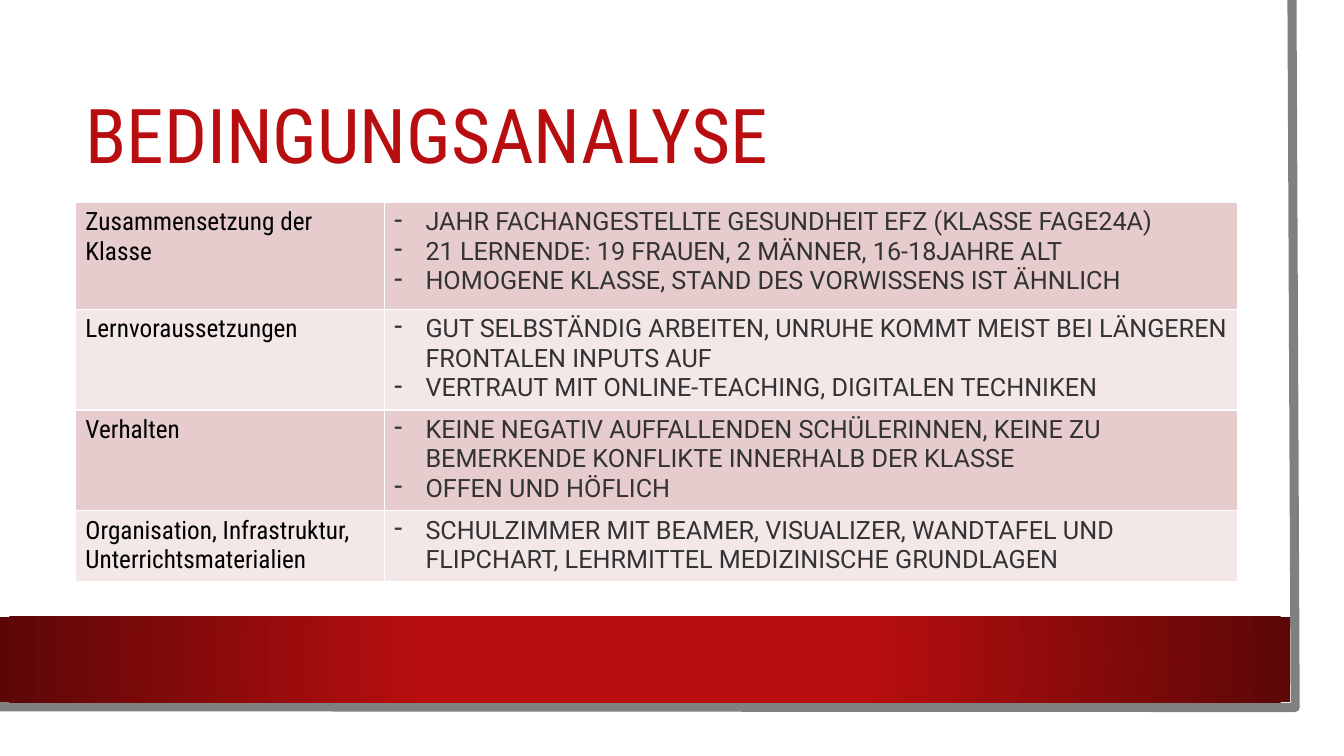
from dataclasses import dataclass

from lxml import etree
from pptx import Presentation
from pptx import util as u
from pptx.dml.color import RGBColor
from pptx.enum import shapes, text
from pptx.oxml import parse_xml
from pptx.oxml.ns import nsdecls, qn


@dataclass(frozen=True)
class Theme:
    red: str = "B80E0F"
    dark_red: str = "5C0707"
    grey: str = "808080"
    white: str = "FFFFFF"
    black: str = "000000"
    ink: str = "333333"
    row_fills: tuple = ("E6CCCC", "F3E7E7")
    heading_font: str = "Roboto Condensed"
    body_font: str = "Roboto"
    title_size: int = 54
    body_size: int = 18
    frame_width: float = 6.5
    border_width: int = 1


THEME = Theme()
CONDITIONS = [
    ("Zusammensetzung der Klasse", [
        "JAHR FACHANGESTELLTE GESUNDHEIT EFZ (KLASSE FAGE24A)",
        "21 LERNENDE: 19 FRAUEN, 2 MÄNNER, 16-18JAHRE ALT",
        "HOMOGENE KLASSE, STAND DES VORWISSENS IST ÄHNLICH",
    ]),
    ("Lernvoraussetzungen", [
        "GUT SELBSTÄNDIG ARBEITEN, UNRUHE KOMMT MEIST BEI LÄNGEREN FRONTALEN INPUTS AUF",
        "VERTRAUT MIT ONLINE-TEACHING, DIGITALEN TECHNIKEN",
    ]),
    ("Verhalten", [
        "KEINE NEGATIV AUFFALLENDEN SCHÜLERINNEN, KEINE ZU BEMERKENDE KONFLIKTE "
        "INNERHALB DER KLASSE",
        "OFFEN UND HÖFLICH",
    ]),
    ("Organisation, Infrastruktur, Unterrichtsmaterialien", [
        "SCHULZIMMER MIT BEAMER, VISUALIZER, WANDTAFEL UND FLIPCHART, "
        "LEHRMITTEL MEDIZINISCHE GRUNDLAGEN",
    ]),
]
COLUMN_WIDTHS = (7.78, 21.51)
ROW_HEIGHTS = (2.69, 2.49, 2.49, 1.74)
BULLET_INDENT = 0.79


def apply_format(target, values):
    for name, value in values.items():
        setattr(target, name, value)


def add_span(para, wording, font, size, color):
    span = para.add_run()
    span.text = wording
    apply_format(span.font, {"name": font, "size": u.Pt(size), "bold": False})
    span.font.color.rgb = RGBColor.from_string(color)


def add_panel(page, box):
    panel = page.shapes.add_shape(shapes.MSO_SHAPE.RECTANGLE, *map(u.Cm, box))
    panel.shadow.inherit = False
    panel.fill.solid()
    panel.fill.fore_color.rgb = RGBColor.from_string(THEME.white)
    panel.line.fill.background()
    return panel


def add_backdrop(page, box):
    left, top, width, height = box
    # White sheet
    add_panel(page, box)

    # Grey edge along the right and bottom
    right, bottom = left + width - 0.63, top + height - 0.64
    builder = page.shapes.build_freeform(u.Cm(right - 0.08), u.Cm(top))
    corners = [(right, bottom), (left - 0.08, bottom - 0.02)]
    builder.add_line_segments([(u.Cm(x), u.Cm(y)) for x, y in corners], close=False)
    edge = builder.convert_to_shape()
    edge.shadow.inherit = False
    edge.fill.background()
    edge.line.color.rgb = RGBColor.from_string(THEME.grey)
    edge.line.width = u.Pt(THEME.frame_width)

    # Red band, darker towards its ends
    band = add_panel(page, (left, bottom - 2.29, right - 0.13, 2.16))
    properties = band.fill._xPr
    properties.replace(properties.find(qn("a:solidFill")), parse_xml(
        f'<a:gradFill rotWithShape="1" {nsdecls("a")}><a:gsLst>'
        f'<a:gs pos="34000"><a:srgbClr val="{THEME.red}"/></a:gs>'
        f'<a:gs pos="100000"><a:srgbClr val="{THEME.dark_red}"/></a:gs></a:gsLst>'
        '<a:path path="circle"><a:fillToRect l="50000" t="50000" r="50000" b="50000"/>'
        '</a:path></a:gradFill>'))


def add_title(page, box, wording):
    frame = page.shapes.add_textbox(*map(u.Cm, box)).text_frame
    apply_format(frame, {"word_wrap": True, "vertical_anchor": text.MSO_ANCHOR.MIDDLE})
    para = frame.paragraphs[0]
    para.line_spacing = 0.9
    add_span(para, wording, THEME.heading_font, THEME.title_size, THEME.red)


def add_dash(para):
    properties = para._p.get_or_add_pPr()
    indent = u.Cm(BULLET_INDENT)
    properties.set("marL", str(indent))
    properties.set("indent", str(-indent))
    etree.SubElement(properties, qn("a:buChar")).set("char", "-")


def style_cell(cell, fill):
    properties = cell._tc.get_or_add_tcPr()
    for side in ("lnL", "lnR", "lnT", "lnB"):
        properties.append(parse_xml(
            f'<a:{side} w="{u.Pt(THEME.border_width)}" {nsdecls("a")}><a:solidFill>'
            f'<a:srgbClr val="{THEME.white}"/></a:solidFill></a:{side}>'))
    cell.fill.solid()
    cell.fill.fore_color.rgb = RGBColor.from_string(fill)


def add_conditions(page, box, conditions):
    table = page.shapes.add_table(len(conditions), 2, *map(u.Cm, box)).table
    apply_format(table, {"first_row": False, "horz_banding": False})
    for column, width in zip(table.columns, COLUMN_WIDTHS):
        column.width = u.Cm(width)
    for index, (topic, points) in enumerate(conditions):
        row = table.rows[index]
        row.height = u.Cm(ROW_HEIGHTS[index])
        topic_cell, points_cell = row.cells
        for cell in (topic_cell, points_cell):
            style_cell(cell, THEME.row_fills[index % 2])
        add_span(topic_cell.text_frame.paragraphs[0], topic,
                 THEME.heading_font, THEME.body_size, THEME.black)
        frame = points_cell.text_frame
        for number, point in enumerate(points):
            para = frame.add_paragraph() if number else frame.paragraphs[0]
            add_dash(para)
            add_span(para, point, THEME.body_font, THEME.body_size, THEME.ink)


def main():
    deck = Presentation()
    apply_format(deck, {"slide_width": u.Cm(33.87), "slide_height": u.Cm(19.05)})
    page = deck.slides.add_slide(deck.slide_layouts[6])
    add_backdrop(page, (0, 0, 33.27, 18.47))
    add_title(page, (1.9, 1.9, 28.88, 3.2), "BEDINGUNGSANALYSE")
    add_conditions(page, (1.9, 5.1, sum(COLUMN_WIDTHS), sum(ROW_HEIGHTS)), CONDITIONS)
    deck.save("out.pptx")


if __name__ == "__main__":
    main()
